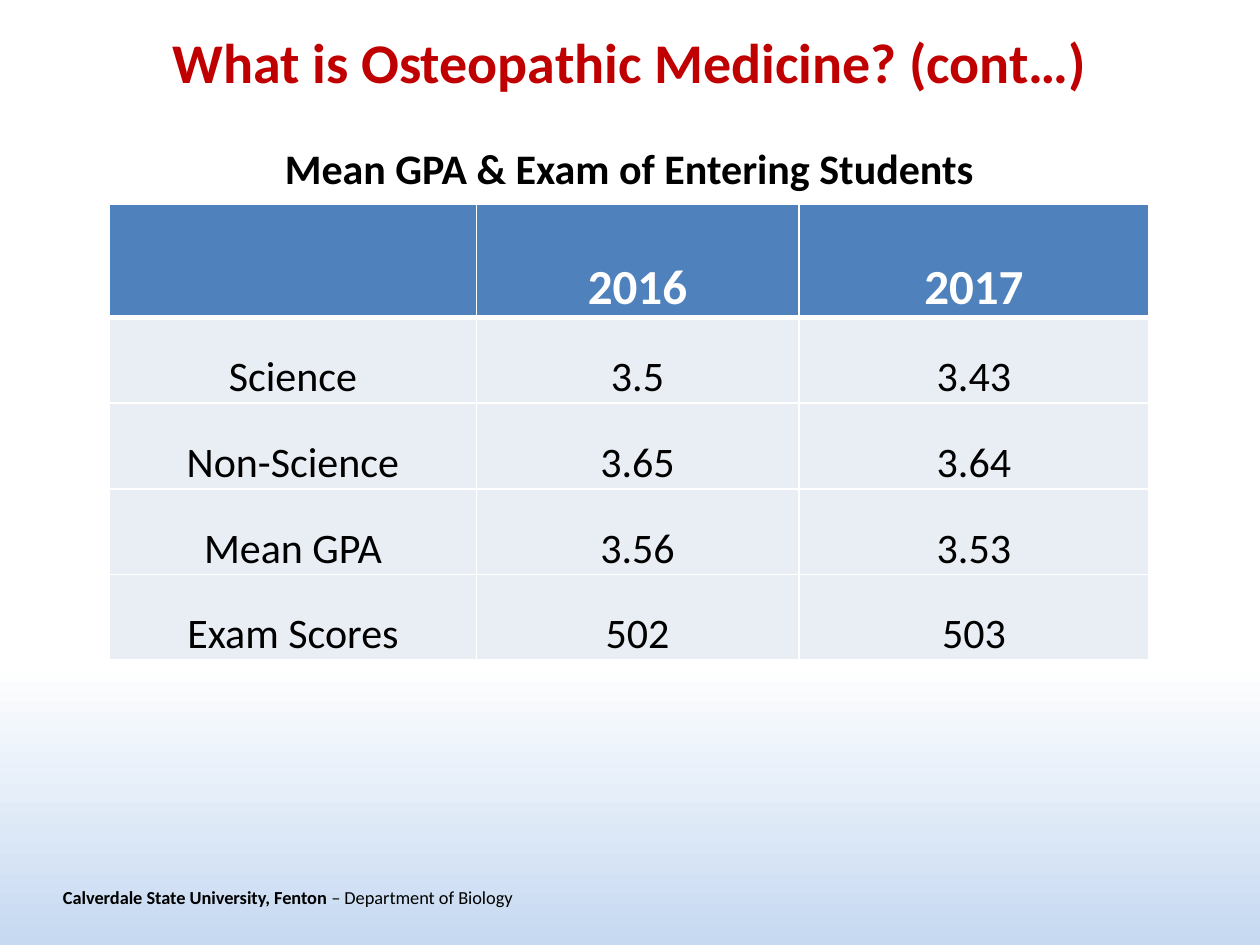
from lxml import etree
from pptx import Presentation
from pptx.dml.color import RGBColor
from pptx.enum import text
from pptx.oxml.ns import qn
from pptx.util import Inches, Pt

RED = RGBColor(0xC0, 0x00, 0x00)
BLACK = RGBColor(0x00, 0x00, 0x00)
WHITE = RGBColor(0xFF, 0xFF, 0xFF)
HEADER_BLUE = RGBColor(0x4F, 0x81, 0xBD)
BODY_GREY = RGBColor(0xE9, 0xED, 0xF4)
SKY = RGBColor(0xC6, 0xD9, 0xF1)

TITLE = "What is Osteopathic Medicine? (cont…)"
CAPTION = "Mean GPA & Exam of Entering Students"
FOOTER = [("Calverdale State University, Fenton ", True),
          ("– Department of Biology", False)]
ROWS = [
    ("", "2016", "2017"),
    ("Science", "3.5", "3.43"),
    ("Non-Science", "3.65", "3.64"),
    ("Mean GPA", "3.56", "3.53"),
    ("Exam Scores", "502", "503"),
]
COL_WIDTHS = [2.91, 2.56, 2.78]
HEADER_HEIGHT, BODY_HEIGHT = 0.9, 0.68

CENTER = text.PP_ALIGN.CENTER


def add_run(p, words, size=24, color=BLACK, bold=False):
    r = p.add_run()
    r.text = words
    r.font.name = "Calibri"
    r.font.size = Pt(size)
    r.font.bold = bold
    r.font.color.rgb = color


def add_text(slide, box, runs, align=None, anchor=text.MSO_ANCHOR.TOP,
             side_inset=0.1, **style):
    tf = slide.shapes.add_textbox(*map(Inches, box)).text_frame
    tf.word_wrap = True
    tf.vertical_anchor = anchor
    tf.margin_left = tf.margin_right = Inches(side_inset)
    p = tf.paragraphs[0]
    p.alignment = align
    for words, bold in runs:
        add_run(p, words, bold=bold, **style)


def set_borders(cell, top, bottom):
    """White lines, 1 pt at the sides and as wide as given above and below."""
    tc_pr = cell._tc.get_or_add_tcPr()
    for side, width in (("L", 1), ("R", 1), ("T", top), ("B", bottom)):
        ln = etree.SubElement(tc_pr, qn(f"a:ln{side}"), w=str(Pt(width)))
        fill = etree.SubElement(ln, qn("a:solidFill"))
        etree.SubElement(fill, qn("a:srgbClr"), val=str(WHITE))


def add_score_table(slide, left, top):
    heights = [HEADER_HEIGHT] + [BODY_HEIGHT] * (len(ROWS) - 1)
    table = slide.shapes.add_table(
        len(ROWS), len(COL_WIDTHS), Inches(left), Inches(top),
        Inches(sum(COL_WIDTHS)), Inches(sum(heights))).table
    for column, width in zip(table.columns, COL_WIDTHS):
        column.width = Inches(width)
    for i, (values, height) in enumerate(zip(ROWS, heights)):
        table.rows[i].height = Inches(height)
        header = i == 0
        for j, value in enumerate(values):
            cell = table.cell(i, j)
            # the thick line under the header is shared with the first body row
            set_borders(cell, top=3 if i == 1 else 1, bottom=3 if header else 1)
            cell.fill.solid()
            cell.fill.fore_color.rgb = HEADER_BLUE if header else BODY_GREY
            cell.vertical_anchor = text.MSO_ANCHOR.BOTTOM
            cell.margin_left = cell.margin_right = cell.margin_top = Inches(0.01)
            cell.margin_bottom = 0
            p = cell.text_frame.paragraphs[0]
            p.alignment = CENTER
            if value:
                add_run(p, value, size=28 if header else 24,
                        color=WHITE if header else BLACK, bold=header)


def set_background(slide):
    fill = slide.background.fill
    fill.gradient()
    fill.gradient_angle = 270
    for stop, position, color in zip(fill.gradient_stops, (0.7, 1), (WHITE, SKY)):
        stop.position = position
        stop.color.rgb = color


def main():
    prs = Presentation()
    prs.slide_width, prs.slide_height = Inches(10), Inches(7.5)
    slide = prs.slides.add_slide(prs.slide_layouts[6])
    set_background(slide)
    add_text(slide, (0.5, 6.92, 5.17, 0.4), FOOTER, size=10.5,
             anchor=text.MSO_ANCHOR.MIDDLE, side_inset=0)
    add_text(slide, (0, 0.17, 10, 0.64), [(TITLE, True)], align=CENTER,
             size=32, color=RED)
    add_score_table(slide, 0.87, 1.62)
    add_text(slide, (1.83, 1.08, 6.33, 0.5), [(CAPTION, True)], align=CENTER)
    prs.save("out.pptx")


if __name__ == "__main__":
    main()
